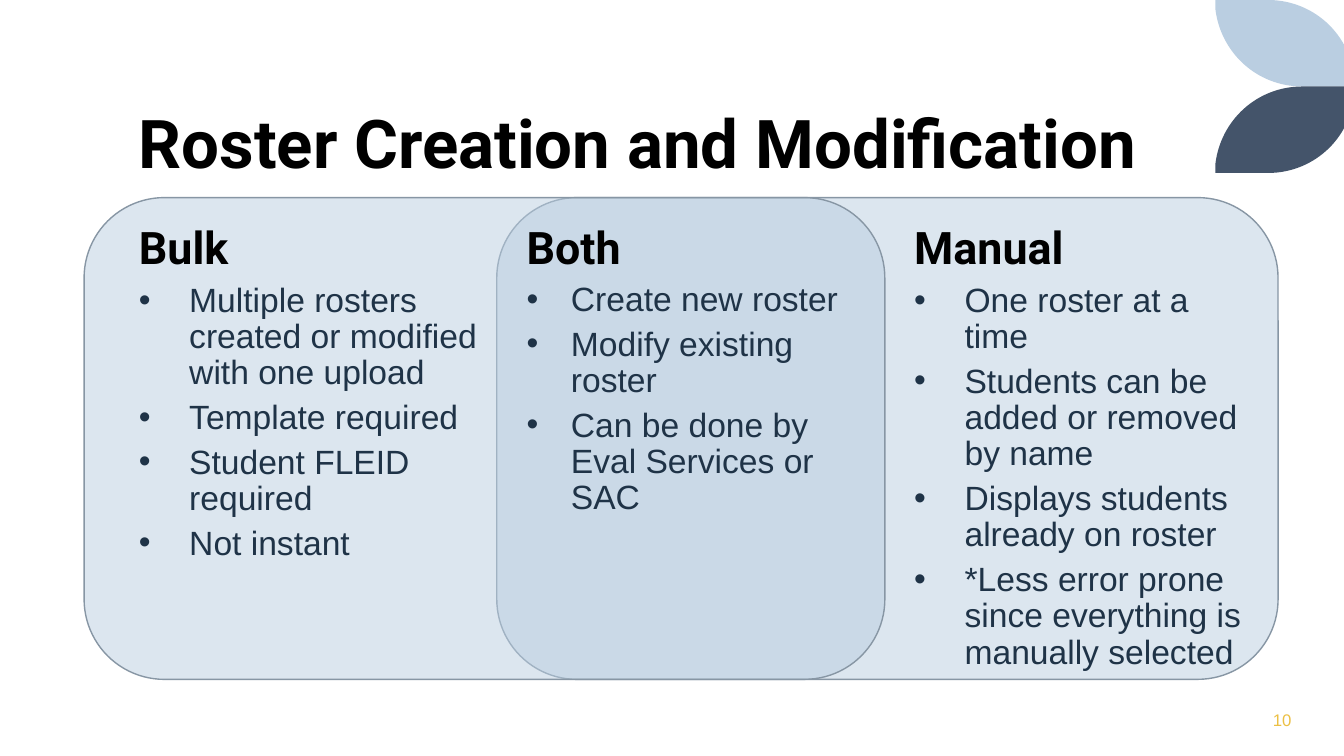
import dataclasses
import typing

import lxml.etree
import pptx
import pptx.dml.color
import pptx.enum.shapes
import pptx.enum.text
import pptx.oxml.ns
import pptx.shapes.autoshape
import pptx.shapes.base
import pptx.slide
import pptx.text.text
import pptx.util

Cm = pptx.util.Cm
Pt = pptx.util.Pt
Anchor = pptx.enum.text.MSO_ANCHOR
Align = pptx.enum.text.PP_ALIGN
qn = pptx.oxml.ns.qn

COLOURS = {
    "pale blue": "BACEE1",
    "slate": "44546A",
    "outline": "8796A4",
    "heading": "000000",
    "body": "1F3347",
    "number": "ECC044",
}
FONTS = {
    "title": {"name": "Roboto", "size": Pt(48), "bold": True},
    "heading": {"name": "Roboto", "size": Pt(32), "bold": True},
    "body": {"name": "Arial", "size": Pt(24), "bold": False},
    "number": {"name": "Arial", "size": Pt(12), "bold": False},
}
FRAME = {
    "word_wrap": True,
    "auto_size": pptx.enum.text.MSO_AUTO_SIZE.NONE,
    "margin_left": Cm(0.25),
    "margin_right": Cm(0.25),
    "margin_top": Cm(0.13),
    "margin_bottom": Cm(0.13),
}
COLUMN_LEFT = 3.25
COLUMN_PITCH = 9.77
LEAF_LEFT = 30.63
LEAF_HEIGHT = 2.18
LEAF_CORNERS = [(0, 0), (1.32, 0), (3.51, 2.18), (2.19, 2.18), (0, 0.23)]
LEAF_CURVES = {1: [(2.54, 0), (3.51, 0.97)], 3: [(1.04, 2.18), (0.13, 1.32)]}

Point = tuple[float, float]


@dataclasses.dataclass(frozen=True)
class Box:
    left: float
    top: float
    width: float
    height: float

    def lengths(self) -> list[pptx.util.Length]:
        return [Cm(value) for value in dataclasses.astuple(self)]


@dataclasses.dataclass(frozen=True)
class Column:
    heading: str
    points: list[str]
    top: float
    width: float
    indent: float


PANELS = [Box(12.52, 4.98, 19.69, 12.14), Box(2.12, 4.98, 20.18, 12.14)]
COLUMNS = [
    Column("Bulk", [
        "Multiple rosters created or modified with one upload",
        "Template required",
        "Student FLEID required",
        "Not instant",
    ], 7.01, 9.27, 1.27),
    Column("Both", [
        "Create new roster",
        "Modify existing roster",
        "Can be done by Eval Services or SAC",
    ], 6.99, 9.14, 1.12),
    Column("Manual", [
        "One roster at a time",
        "Students can be added or removed by name",
        "Displays students already on roster",
        "*Less error prone since everything is manually selected",
    ], 7.01, 9.25, 1.27),
]


def set_attributes(target: typing.Any, values: dict[str, typing.Any]) -> None:
    for name, value in values.items():
        setattr(target, name, value)


def colour(name: str) -> pptx.dml.color.RGBColor:
    return pptx.dml.color.RGBColor.from_string(COLOURS[name])


def fill_shape(shape: pptx.shapes.autoshape.Shape, colour_name: str) -> None:
    shape.shadow.inherit = False
    shape.fill.solid()
    shape.fill.fore_color.rgb = colour(colour_name)


def add_leaf(slide: pptx.slide.Slide, colour_name: str, top: float, mirrored: bool) -> None:
    def place(point: Point) -> Point:
        x, y = point
        return (x, LEAF_HEIGHT - y) if mirrored else (x, y)

    vertices = [(Cm(LEAF_LEFT + x), Cm(top + y)) for x, y in map(place, LEAF_CORNERS)]
    builder = slide.shapes.build_freeform(*vertices[0])
    builder.add_line_segments(vertices[1:], close=True)
    leaf = builder.convert_to_shape()
    segments = list(leaf.element.spPr.iter(qn("a:lnTo")))
    for index, controls in LEAF_CURVES.items():
        segment = segments[index]
        bezier = lxml.etree.Element(qn("a:cubicBezTo"))
        for x, y in map(place, controls):
            lxml.etree.SubElement(bezier, qn("a:pt"), x=str(Cm(x)), y=str(Cm(y)))
        bezier.append(segment[0])
        segment.getparent().replace(segment, bezier)
    fill_shape(leaf, colour_name)
    leaf.line.fill.background()


def add_panel(slide: pptx.slide.Slide, box: Box) -> None:
    panel = slide.shapes.add_shape(
        pptx.enum.shapes.MSO_SHAPE.ROUNDED_RECTANGLE, *box.lengths()
    )
    fill_shape(panel, "pale blue")
    solid = panel.element.spPr.find(qn("a:solidFill"))
    lxml.etree.SubElement(solid[0], qn("a:alpha"), val="50000")
    panel.line.color.rgb = colour("outline")
    panel.line.width = Pt(1)


def write_text(
    shape: pptx.shapes.base.BaseShape,
    lines: list[str],
    font: str,
    colour_name: str,
    anchor: Anchor = Anchor.TOP,
    align: Align = Align.LEFT,
    indent: float = 0,
) -> None:
    frame = shape.text_frame
    set_attributes(frame, FRAME | {"vertical_anchor": anchor})
    frame.text = "\n".join(lines)
    for index, paragraph in enumerate(frame.paragraphs):
        set_attributes(paragraph, {
            "alignment": align,
            "line_spacing": 0.9,
            "space_before": Pt(6 if index else 0),
        })
        run_font = paragraph.runs[0].font
        set_attributes(run_font, FONTS[font])
        run_font.color.rgb = colour(colour_name)
        if indent:
            add_bullet(paragraph, indent)


def add_bullet(paragraph: pptx.text.text._Paragraph, indent: float) -> None:
    properties = paragraph._p.get_or_add_pPr()
    properties.set("marL", str(Cm(indent)))
    properties.set("indent", str(-Cm(indent)))
    lxml.etree.SubElement(properties, qn("a:buFont"), typeface="Arial")
    lxml.etree.SubElement(properties, qn("a:buChar"), char="•")


def add_column(slide: pptx.slide.Slide, column: Column, left: float) -> None:
    heading = slide.shapes.add_textbox(*Box(left, 5.56, 8.81, 1.45).lengths())
    write_text(heading, [column.heading], "heading", "heading")
    body = slide.shapes.add_textbox(*Box(left, column.top, column.width, 7.85).lengths())
    write_text(body, column.points, "body", "body", indent=column.indent)


def main() -> None:
    presentation = pptx.Presentation()
    set_attributes(presentation, {"slide_width": Cm(33.87), "slide_height": Cm(19.05)})
    slide = presentation.slides.add_slide(presentation.slide_layouts.get_by_name("Title Only"))

    add_leaf(slide, "pale blue", 0, mirrored=False)
    add_leaf(slide, "slate", LEAF_HEIGHT, mirrored=True)

    number = slide.shapes.add_textbox(*Box(28.2, 17.66, 4.6, 1.02).lengths())
    write_text(number, ["10"], "number", "number", Anchor.MIDDLE, Align.RIGHT)

    for box in PANELS:
        add_panel(slide, box)

    title = slide.shapes.title
    title_box = Box(COLUMN_LEFT, 1.07, 27.15, 3.68)
    set_attributes(title, dict(zip(("left", "top", "width", "height"), title_box.lengths())))
    write_text(title, ["Roster Creation and Modification"], "title", "heading", Anchor.BOTTOM)

    for index, column in enumerate(COLUMNS):
        add_column(slide, column, COLUMN_LEFT + index * COLUMN_PITCH)

    presentation.save("out.pptx")


if __name__ == "__main__":
    main()
